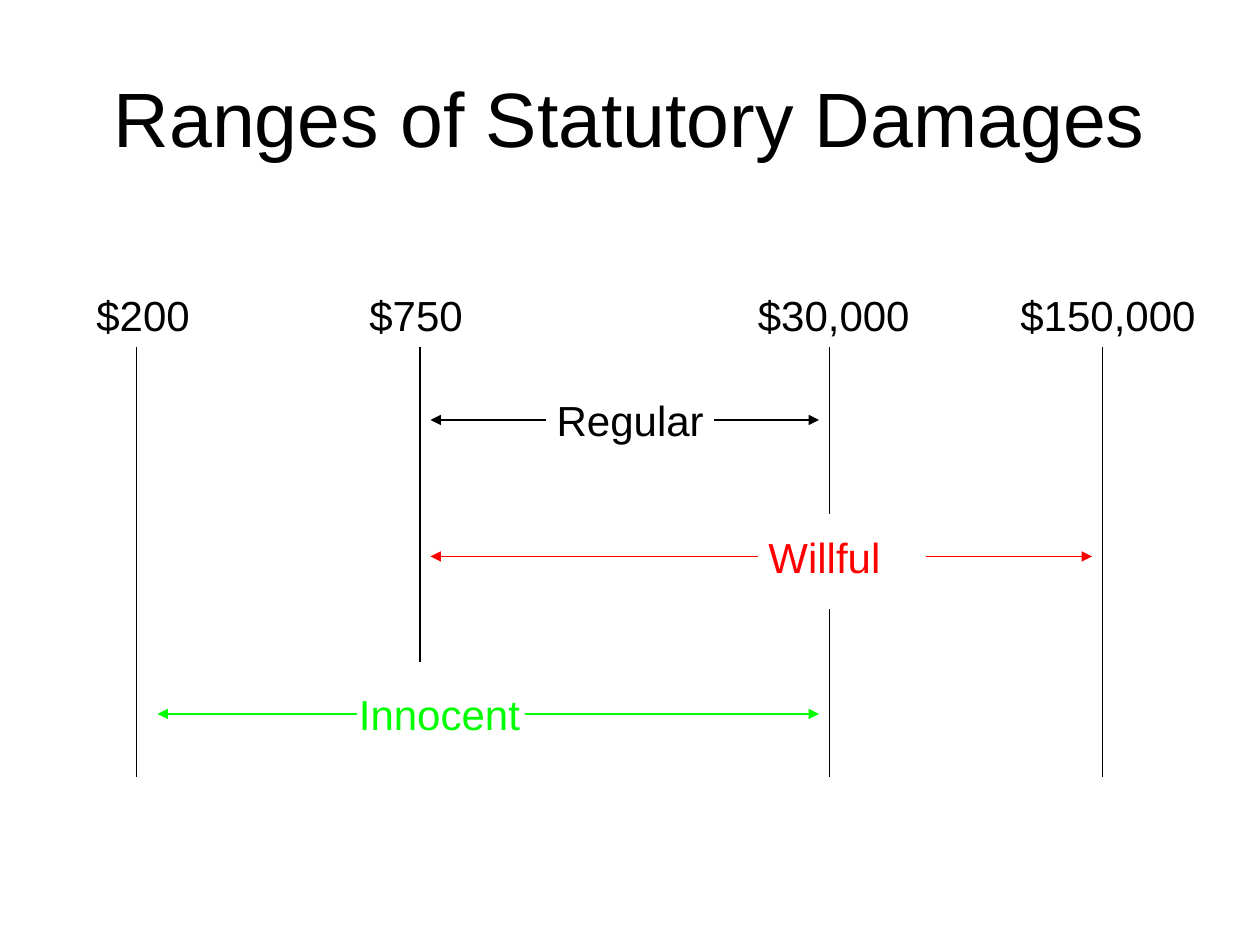
from pptx import Presentation
from pptx.dml.color import RGBColor
from pptx.enum.shapes import MSO_CONNECTOR
from pptx.enum.text import MSO_ANCHOR, MSO_AUTO_SIZE, PP_ALIGN
from pptx.oxml.ns import qn
from pptx.util import Pt
from lxml.etree import SubElement

FONT = "Arial"
COLORS = {"ink": "000000", "willful": "FF0000", "innocent": "00FF00"}

# Amounts: label, label left, label width, line x, (top, bottom) of each line piece
AMOUNTS = [
    ("$200", 0, 68, 30, [(36, 282)]),
    ("$750", 156, 68, 192, [(36, 216)]),
    ("$30,000", 378, 102, 426, [(36, 132), (186, 282)]),
    ("$150,000", 528, 115, 582, [(36, 282)]),
]

# Ranges: label, colour, label left, width, top, (start, end) of each arrow
RANGES = [
    ("Regular", "ink", 263, 99, 60, [(264, 198), (360, 420)]),
    ("Willful", "willful", 384, 79, 138, [(385, 198), (481, 576)]),
    ("Innocent", "innocent", 150, 107, 228, [(156, 42), (252, 420)]),
]
LABEL_HEIGHT = 36


def add_text(slide, text, left, top, width, height, size, color, wrap=False):
    shape = slide.shapes.add_textbox(Pt(left), Pt(top), Pt(width), Pt(height))
    frame = shape.text_frame
    frame.word_wrap = wrap
    frame.auto_size = MSO_AUTO_SIZE.NONE if wrap else MSO_AUTO_SIZE.SHAPE_TO_FIT_TEXT
    paragraph = frame.paragraphs[0]
    paragraph.text = text
    paragraph.font.name = FONT
    paragraph.font.size = Pt(size)
    paragraph.font.color.rgb = RGBColor.from_string(COLORS[color])
    return frame


def add_line(slide, x1, y1, x2, y2, color, arrow=False):
    line = slide.shapes.add_connector(
        MSO_CONNECTOR.STRAIGHT, Pt(x1), Pt(y1), Pt(x2), Pt(y2))
    line.line.color.rgb = RGBColor.from_string(COLORS[color])
    line.line.width = Pt(0.75)
    if arrow:
        SubElement(line.line._get_or_add_ln(), qn("a:tailEnd"), type="triangle")
    SubElement(line._element.spPr, qn("a:effectLst"))


def add_title(slide, left, top, width, height):
    frame = add_text(slide, "Ranges of Statutory Damages",
                     left, top, width, height, 44, "ink", wrap=True)
    frame.vertical_anchor = MSO_ANCHOR.MIDDLE
    frame.paragraphs[0].alignment = PP_ALIGN.CENTER


def add_diagram(slide, left, top):
    # Dollar amounts with their vertical lines
    for text, label_left, width, x, pieces in AMOUNTS:
        add_text(slide, text, left + label_left, top, width, LABEL_HEIGHT, 24, "ink")
        for start, end in pieces:
            add_line(slide, left + x, top + start, left + x, top + end, "ink")

    # Ranges, with arrows pointing outwards from each label
    for text, color, label_left, width, row_top, arrows in RANGES:
        add_text(slide, text, left + label_left, top + row_top,
                 width, LABEL_HEIGHT, 24, color)
        y = top + row_top + LABEL_HEIGHT / 2
        for start, end in arrows:
            add_line(slide, left + start, y, left + end, y, color, arrow=True)


def main():
    presentation = Presentation()
    presentation.slide_width, presentation.slide_height = Pt(720), Pt(540)
    slide = presentation.slides.add_slide(presentation.slide_layouts[6])
    add_title(slide, 36, 21.5, 648, 90)
    add_diagram(slide, 48, 162)
    presentation.save("out.pptx")


if __name__ == "__main__":
    main()
